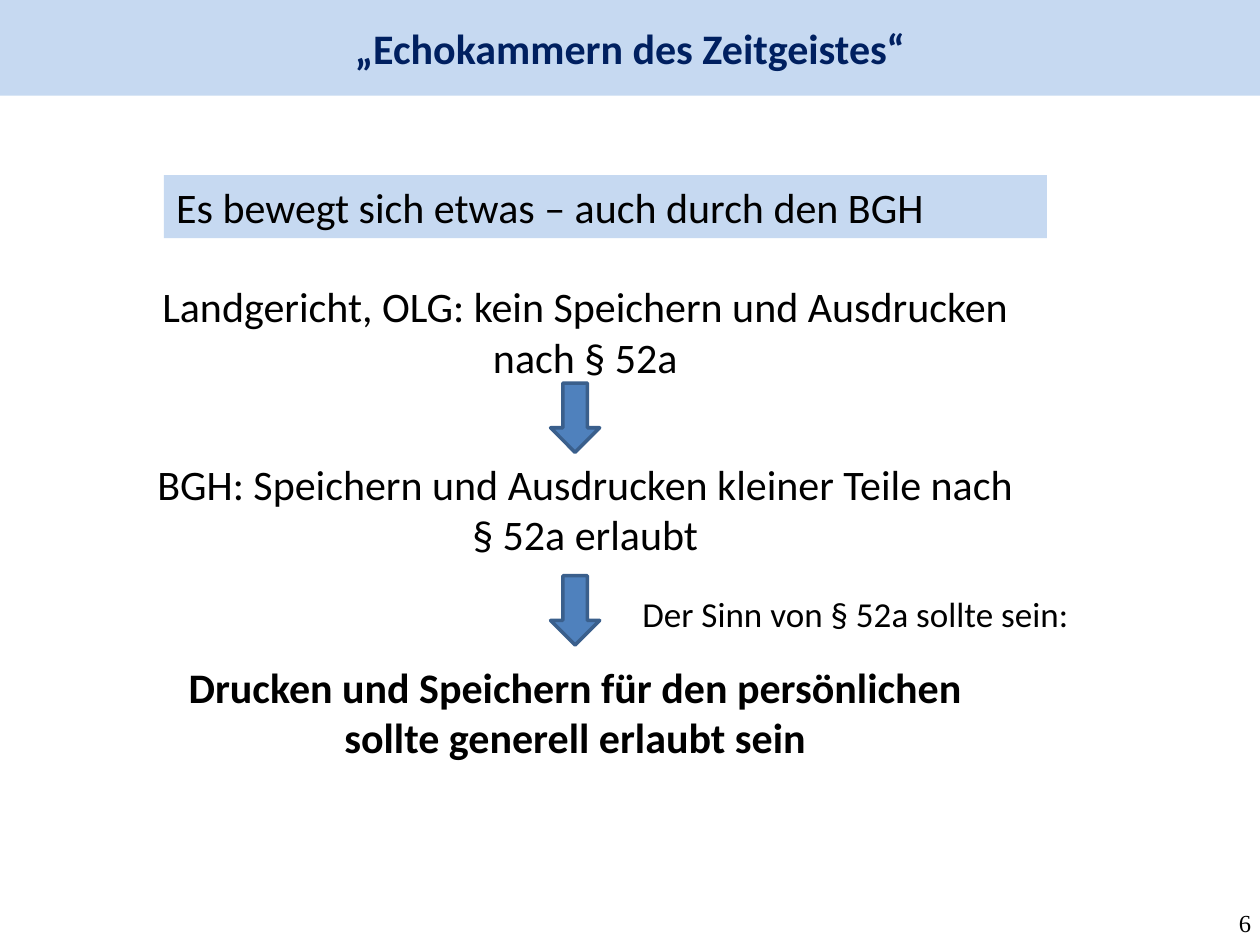
from dataclasses import dataclass
from typing import Optional

import pptx
import pptx.dml.color
import pptx.enum.shapes
import pptx.enum.text
import pptx.util

Pt = pptx.util.Pt
RGBColor = pptx.dml.color.RGBColor
Align = pptx.enum.text.PP_ALIGN
Anchor = pptx.enum.text.MSO_ANCHOR

PALE = RGBColor(0xC6, 0xD9, 0xF1)
NAVY = RGBColor(0x00, 0x20, 0x60)
BLACK = RGBColor(0, 0, 0)
BLUE = RGBColor(0x4F, 0x81, 0xBD)
EDGE = RGBColor(0x3A, 0x5F, 0x8C)

WIDE = 504.7
TALL = 65.5


@dataclass
class Label:
    text: str
    left: float
    top: float
    width: float
    height: float
    size: float = 24
    font: str = "Calibri"
    color: RGBColor = BLACK
    bold: bool = False
    align: Align = Align.CENTER
    fill: Optional[RGBColor] = None
    inset: tuple[float, float] = (7.2, 3.6)
    anchor: Anchor = Anchor.TOP


def write(shape, label: Label) -> None:
    shape.left, shape.top = Pt(label.left), Pt(label.top)
    shape.width, shape.height = Pt(label.width), Pt(label.height)
    if label.fill is not None:
        shape.fill.solid()
        shape.fill.fore_color.rgb = label.fill
    frame = shape.text_frame
    frame.word_wrap = True
    frame.auto_size = pptx.enum.text.MSO_AUTO_SIZE.NONE
    frame.vertical_anchor = label.anchor
    side, edge = label.inset
    frame.margin_left = frame.margin_right = Pt(side)
    frame.margin_top = frame.margin_bottom = Pt(edge)
    para = frame.paragraphs[0]
    para.alignment = label.align
    run = para.add_run()
    run.text = label.text
    run.font.name = label.font
    run.font.size = Pt(label.size)
    run.font.bold = label.bold
    run.font.color.rgb = label.color


def add_label(slide, label: Label) -> None:
    write(slide.shapes.add_textbox(0, 0, Pt(1), Pt(1)), label)


def add_arrow(slide, top: float) -> None:
    arrow = slide.shapes.add_shape(
        pptx.enum.shapes.MSO_SHAPE.DOWN_ARROW,
        Pt(314.6), Pt(top), Pt(28.1), Pt(39.6),
    )
    arrow.shadow.inherit = False
    arrow.fill.solid()
    arrow.fill.fore_color.rgb = BLUE
    arrow.line.color.rgb = EDGE
    arrow.line.width = Pt(2)


TITLE = Label("„Echokammern des Zeitgeistes“", 0, 0, 720, 54.7, color=NAVY,
              bold=True, fill=PALE, anchor=Anchor.MIDDLE)
LABELS = [
    Label("Es bewegt sich etwas – auch durch den BGH", 93.6, 100.1, WIDE, 36,
          align=Align.LEFT, fill=PALE),
    Label("Landgericht, OLG: kein Speichern und Ausdrucken nach § 52a",
          82.1, 157, WIDE, TALL),
    Label("BGH: Speichern und Ausdrucken kleiner Teile nach § 52a erlaubt",
          82.1, 258.5, WIDE, TALL),
    Label("Drucken und Speichern für den persönlichen sollte generell erlaubt sein",
          76.3, 374.4, WIDE, TALL, bold=True),
    Label("Der Sinn von § 52a sollte sein:", 360, 334.8, 311.8, 31.7, size=20,
          align=Align.LEFT),
    Label("6", 666, 519, 49, 20, size=14, font="Times New Roman",
          align=Align.RIGHT, inset=(0, 0)),
]
ARROWS = [218.9, 329]


def main() -> None:
    deck = pptx.Presentation()
    deck.slide_width, deck.slide_height = Pt(720), Pt(540)
    slide = deck.slides.add_slide(deck.slide_layouts[5])
    write(slide.shapes.title, TITLE)
    for label in LABELS:
        add_label(slide, label)
    for top in ARROWS:
        add_arrow(slide, top)
    deck.save("out.pptx")


if __name__ == "__main__":
    main()
